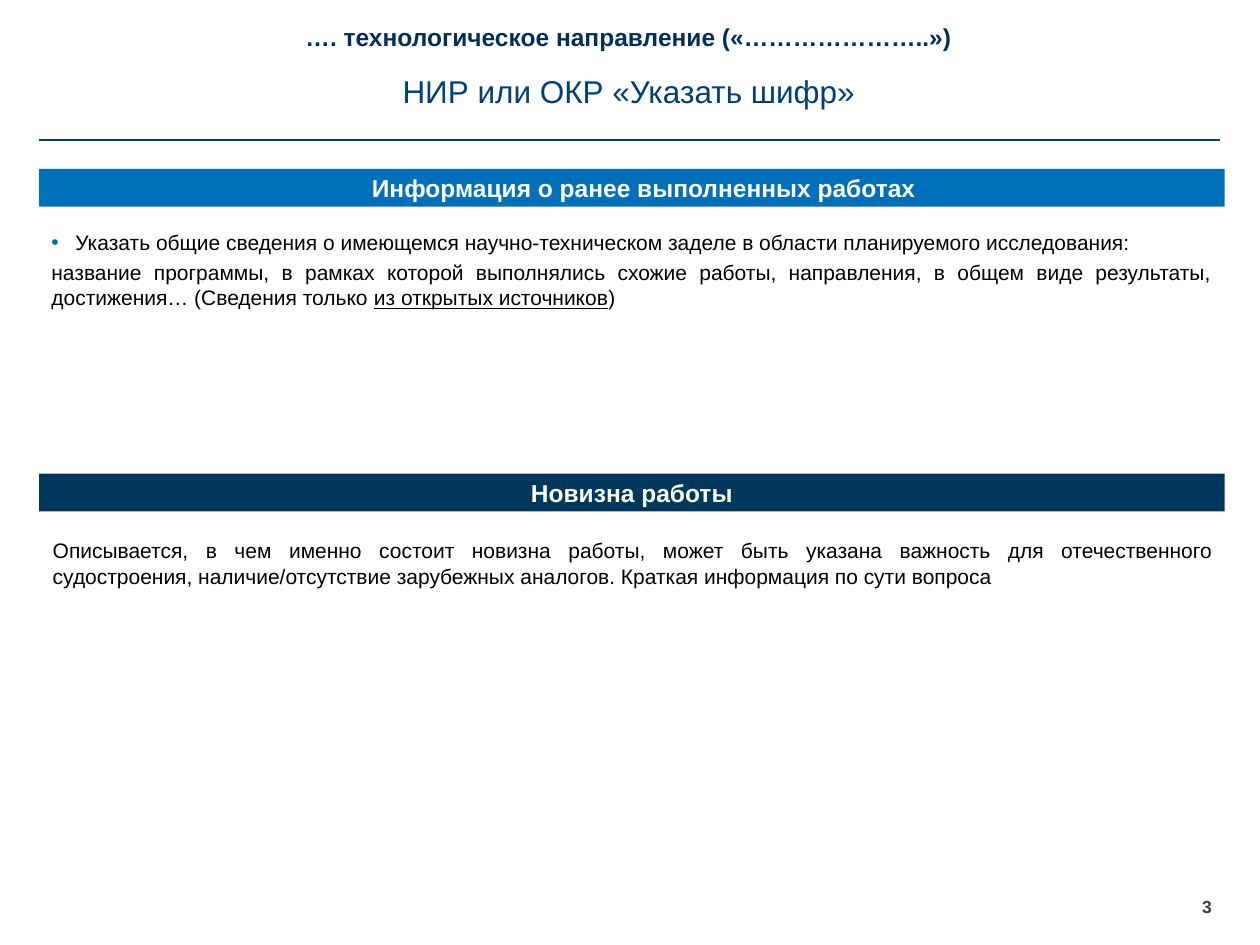
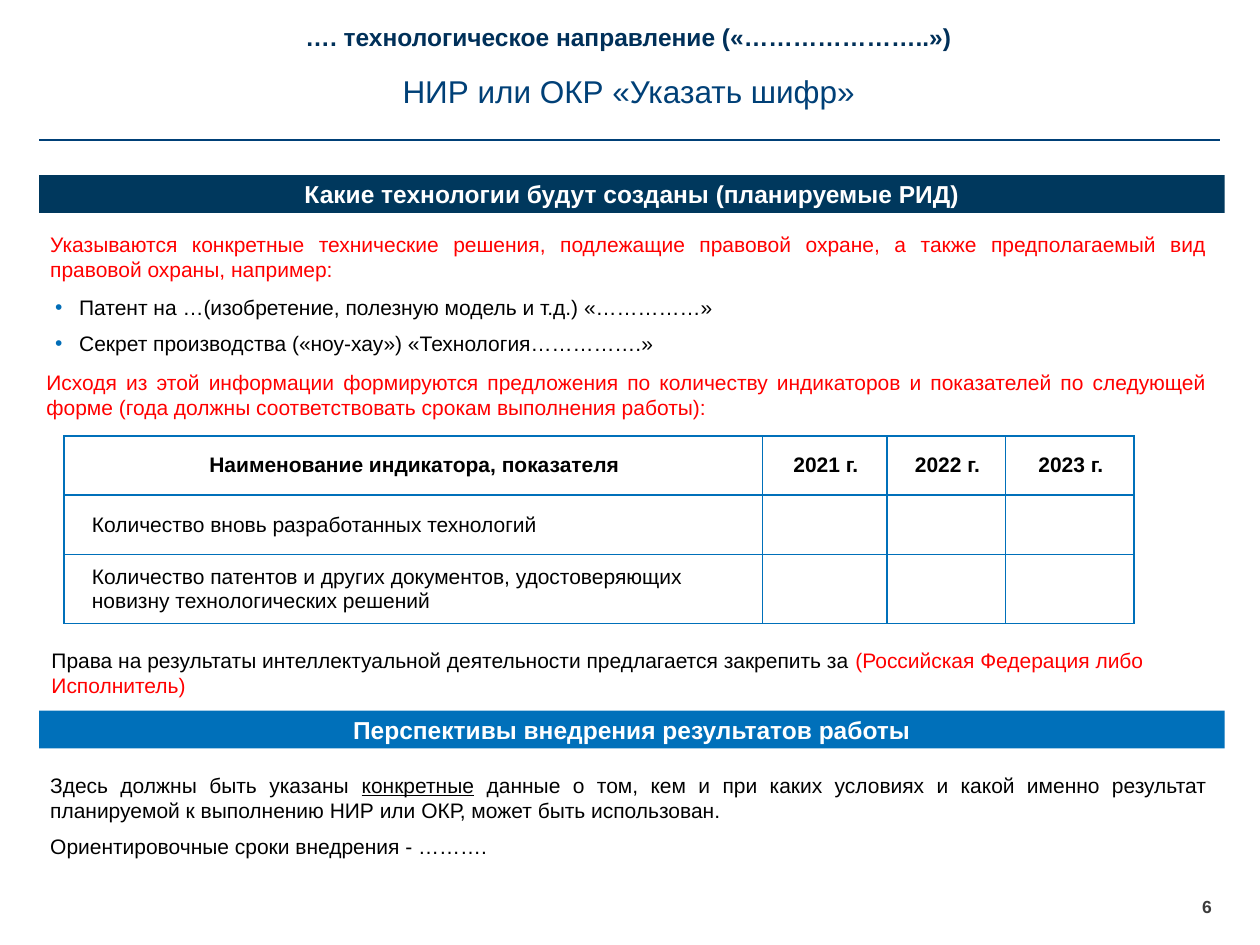
import lxml.etree
import pptx
import pptx.dml.color
import pptx.enum.shapes
import pptx.enum.text
import pptx.oxml.ns
import pptx.util

Inches = pptx.util.Inches
Pt = pptx.util.Pt
ALIGN = pptx.enum.text.PP_ALIGN
ANCHOR = pptx.enum.text.MSO_ANCHOR
qn = pptx.oxml.ns.qn

COLORS = {
    "navy": "00385D",
    "blue": "0070BA",
    "bullet": "016DB7",
    "direction": "003059",
    "title": "004077",
    "number": "3C3C3C",
    "black": "000000",
    "red": "FF0000",
    "white": "FFFFFF",
}
FORMATS = {
    "direction": {"size": Pt(14), "bold": True, "color": "direction"},
    "title": {"size": Pt(18), "color": "title"},
    "number": {"size": Pt(10), "bold": True, "color": "number"},
    "band": {"size": Pt(14), "bold": True, "color": "white"},
    "body": {"size": Pt(12), "color": "black"},
    "hint": {"size": Pt(12), "color": "red"},
    "underlined": {"size": Pt(12), "color": "black", "underline": True},
    "heading": {"size": Pt(12), "bold": True, "color": "black"},
}
MARGINS = ("margin_left", "margin_top", "margin_right", "margin_bottom")
BAND_LEFT, BAND_WIDTH, BAND_HEIGHT = 0.31, 9.41, 0.3
BULLET_INDENT = 0.19


def set_values(target, values):
    for name, value in values.items():
        setattr(target, name, value)


def rgb(color):
    return pptx.dml.color.RGBColor.from_string(COLORS[color])


class SlideBuilder:
    font_name = "Arial"

    def __init__(self, presentation):
        self.presentation = presentation
        self.slide = None

    def new_slide(self, number):
        self.slide = self.presentation.slides.add_slide(self.presentation.slide_layouts[6])
        self.rule(0.31, 9.68, 1.11)
        self.text(0.31, 0.12, 9.36, 0.29, [[("…. технологическое направление («…………………..»)", "direction")]],
                  align=ALIGN.CENTER, anchor=ANCHOR.BOTTOM, inset=False)
        self.text(0.3, 0.52, 9.38, 0.4, [[("НИР или ОКР «Указать шифр»", "title")]], align=ALIGN.CENTER)
        self.text(9.54, 7.11, 0.24, 0.18, [[(str(number), "number")]], align=ALIGN.LEFT, inset=False)

    def rule(self, left, right, top):
        connector = self.slide.shapes.add_connector(
            pptx.enum.shapes.MSO_CONNECTOR.STRAIGHT, Inches(left), Inches(top), Inches(right), Inches(top))
        connector.line.color.rgb = rgb("title")
        connector.line.width = Pt(1)
        lxml.etree.SubElement(connector._element.spPr, qn("a:effectLst"))

    def fill_paragraph(self, paragraph, runs, align, indent=0, bulleted=False, **spacing):
        properties = paragraph._p.get_or_add_pPr()
        properties.set("marL", str(Inches(indent)))
        properties.set("indent", str(-Inches(indent) if bulleted else 0))
        if bulleted:
            color = lxml.etree.SubElement(properties, qn("a:buClr"))
            lxml.etree.SubElement(color, qn("a:srgbClr"), val=COLORS["bullet"])
            lxml.etree.SubElement(properties, qn("a:buFont"), typeface=self.font_name)
            lxml.etree.SubElement(properties, qn("a:buChar"), char="•")
        set_values(paragraph, {"alignment": align, **spacing})
        for text, style in runs:
            run = paragraph.add_run()
            run.text = text
            values = dict(FORMATS[style])
            run.font.color.rgb = rgb(values.pop("color"))
            set_values(run.font, {"name": self.font_name, **values})

    def text(self, left, top, width, height, paragraphs, align=ALIGN.JUSTIFY, anchor=ANCHOR.TOP,
             inset=True, bullets=0, after=0, before=0):
        box = self.slide.shapes.add_textbox(Inches(left), Inches(top), Inches(width), Inches(height))
        frame = box.text_frame
        auto_size = pptx.enum.text.MSO_AUTO_SIZE
        set_values(frame, {
            "word_wrap": True,
            "vertical_anchor": anchor,
            "auto_size": auto_size.SHAPE_TO_FIT_TEXT if inset else auto_size.NONE,
        })
        if not inset:
            set_values(frame, dict.fromkeys(MARGINS, 0))
        for index, runs in enumerate(paragraphs):
            paragraph = frame.add_paragraph() if index else frame.paragraphs[0]
            bulleted = index < bullets
            self.fill_paragraph(paragraph, runs, align, BULLET_INDENT if bulleted else 0, bulleted,
                                space_before=Pt(before if index else 0), space_after=Pt(after))

    def band(self, top, caption, color, indent=0):
        shape = self.slide.shapes.add_shape(
            pptx.enum.shapes.MSO_SHAPE.RECTANGLE,
            Inches(BAND_LEFT), Inches(top), Inches(BAND_WIDTH), Inches(BAND_HEIGHT))
        shape.shadow.inherit = False
        shape.fill.solid()
        shape.fill.fore_color.rgb = rgb(color)
        shape.line.fill.background()
        set_values(shape.text_frame, {"word_wrap": True, "vertical_anchor": ANCHOR.MIDDLE})
        self.fill_paragraph(shape.text_frame.paragraphs[0], [(caption, "band")], ALIGN.CENTER, indent)

    def border(self, cell):
        properties = cell._tc.get_or_add_tcPr()
        for index, side in enumerate(("lnL", "lnR", "lnT", "lnB")):
            line = lxml.etree.Element(qn("a:" + side), w=str(Pt(1)))
            fill = lxml.etree.SubElement(line, qn("a:solidFill"))
            lxml.etree.SubElement(fill, qn("a:srgbClr"), val=COLORS["blue"])
            properties.insert(index, line)

    def table(self, left, top, column_widths, row_heights, rows):
        table = self.slide.shapes.add_table(
            len(rows), len(column_widths), Inches(left), Inches(top),
            Inches(sum(column_widths)), Inches(sum(row_heights))).table
        set_values(table, {"first_row": False, "horz_banding": False})
        for column, width in zip(table.columns, column_widths):
            column.width = Inches(width)
        for row_index, (row, height, texts) in enumerate(zip(table.rows, row_heights, rows)):
            row.height = Inches(height)
            for cell, text in zip(row.cells, texts):
                cell.fill.background()
                self.border(cell)
                set_values(cell, dict(zip(MARGINS, (Inches(0.02), 0, Inches(0.02), 0))))
                cell.vertical_anchor = ANCHOR.MIDDLE
                paragraph = cell.text_frame.paragraphs[0]
                if not text:
                    paragraph.font.size = Pt(12)
                elif row_index:
                    self.fill_paragraph(paragraph, [(text, "body")], ALIGN.LEFT, 0.2)
                else:
                    self.fill_paragraph(paragraph, [(text, "heading")], ALIGN.CENTER, 0.02)


def build_background_slide(builder):
    builder.new_slide(3)
    builder.band(1.34, "Информация о ранее выполненных работах", "blue", indent=0.19)
    builder.text(0.31, 1.77, 9.41, 0.75, [
        [("Указать общие сведения о имеющемся научно-техническом заделе в области "
          "планируемого исследования:", "body")],
        [("название программы, в рамках которой выполнялись схожие работы, направления, в общем виде "
          "результаты, достижения… (Сведения только ", "body"),
         ("из открытых источников", "underlined"), (")", "body")],
    ], bullets=1, after=3)
    builder.band(3.76, "Новизна работы", "navy")
    builder.text(0.32, 4.22, 9.41, 0.5, [
        [("Описывается, в чем именно состоит новизна работы, может быть указана важность для "
          "отечественного судостроения, наличие/отсутствие зарубежных аналогов. "
          "Краткая информация по сути вопроса", "body")],
    ])


def build_results_slide(builder):
    builder.new_slide(6)
    builder.band(1.39, "Какие технологии будут созданы (планируемые РИД)", "navy")
    builder.text(0.3, 1.79, 9.38, 0.5, [
        [("Указываются конкретные технические решения, подлежащие правовой охране, а также "
          "предполагаемый вид правовой охраны, например:", "hint")],
    ], after=3)
    builder.text(0.34, 2.29, 9.44, 0.59, [
        [("Патент на …(изобретение, полезную модель и т.д.) «……………»", "body")],
        [("Секрет производства («ноу-хау») «Технология…………….»", "body")],
    ], bullets=2, before=3, after=3)
    builder.text(0.27, 2.88, 9.41, 0.5, [
        [("Исходя из этой информации формируются предложения по количеству индикаторов и показателей "
          "по следующей форме (года должны соответствовать срокам выполнения работы):", "hint")],
    ], after=3)
    builder.table(0.51, 3.46, [5.54, 0.99, 0.94, 1.02], [0.47, 0.47, 0.55], [
        ["Наименование индикатора, показателя", "2021 г.", "2022 г.", "2023 г."],
        ["Количество вновь разработанных технологий", "", "", ""],
        ["Количество патентов и других документов, удостоверяющих новизну технологических решений",
         "", "", ""],
    ])
    builder.text(0.31, 5.09, 9.35, 0.5, [
        [("Права на результаты интеллектуальной деятельности предлагается закрепить за ", "body"),
         ("(Российская Федерация либо Исполнитель)", "hint")],
    ], align=ALIGN.LEFT)
    builder.band(5.64, "Перспективы внедрения результатов работы", "blue")
    builder.text(0.3, 6.08, 9.38, 0.79, [
        [("Здесь должны быть указаны ", "body"), ("конкретные", "underlined"),
         (" данные о том, кем и при каких условиях и какой именно результат планируемой к выполнению "
          "НИР или ОКР, может быть использован.", "body")],
        [("Ориентировочные сроки внедрения - ……….", "body")],
    ], after=6)


def main():
    presentation = pptx.Presentation()
    set_values(presentation, {"slide_width": Inches(10), "slide_height": Inches(7.5)})
    builder = SlideBuilder(presentation)
    build_background_slide(builder)
    build_results_slide(builder)
    presentation.save("out.pptx")


if __name__ == "__main__":
    main()
